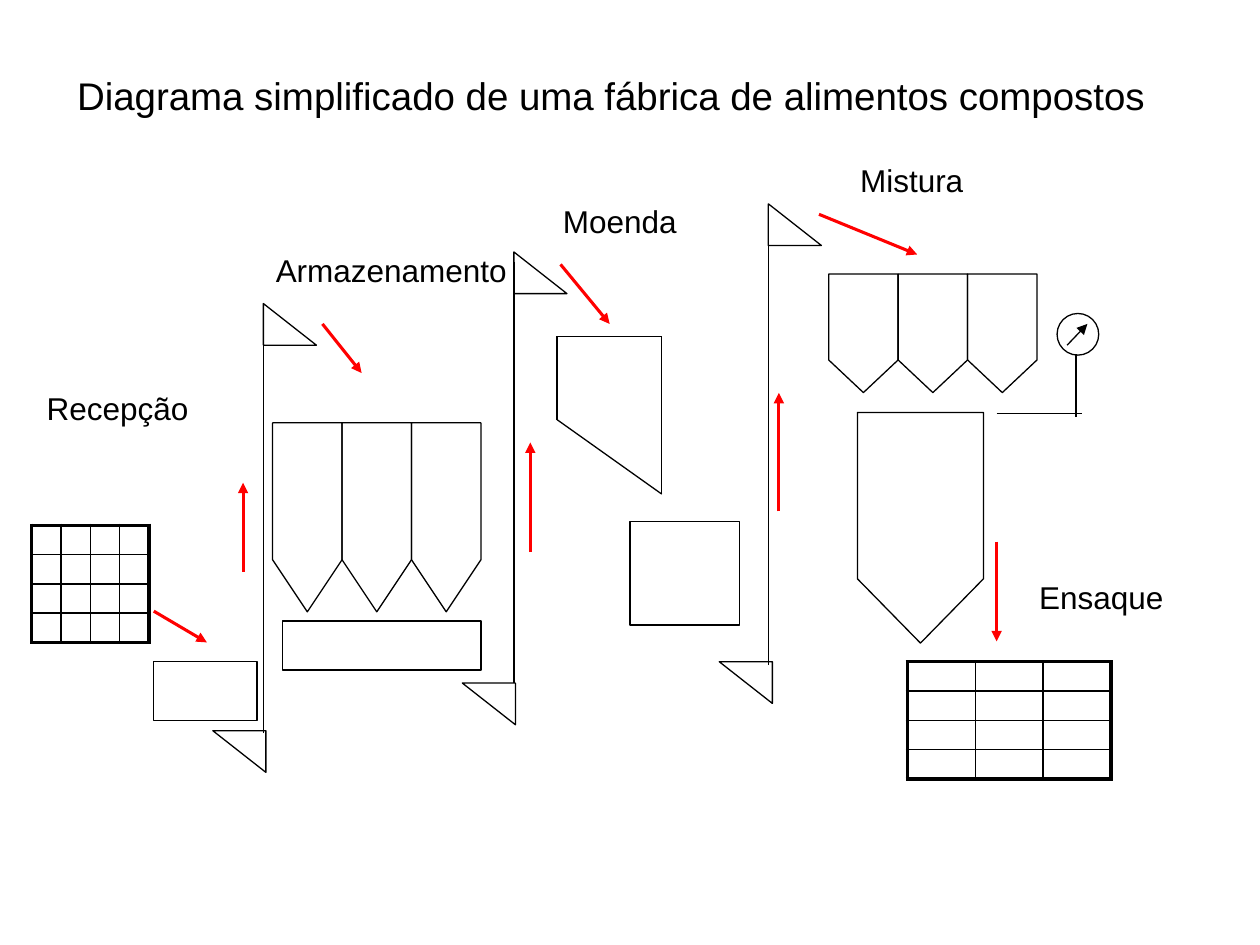
from lxml import etree
from pptx import Presentation
from pptx.dml.color import RGBColor as RGB
from pptx.enum.shapes import MSO_CONNECTOR as LINK, MSO_SHAPE as KIND
from pptx.enum.text import MSO_ANCHOR as ANCHOR, MSO_AUTO_SIZE as SIZE, PP_ALIGN as ALIGN
from pptx.oxml.ns import qn
from pptx.util import Cm, Pt

BLACK, RED = "000000", "FF0000"


def draw(kind, x, y, w, h, turn=0):
    shape = shapes.add_shape(kind, Cm(x), Cm(y), Cm(w), Cm(h))
    shape.rotation = turn
    shape.shadow.inherit = False
    shape.fill.background()
    shape.line.color.rgb = RGB.from_string(BLACK)
    shape.line.width = Pt(0.75)
    return shape


def link(start, end, color=BLACK, width=0.75, arrow=False):
    line = shapes.add_connector(LINK.STRAIGHT, *map(Cm, start + end))
    line.line.color.rgb = RGB.from_string(color)
    line.line.width = Pt(width)
    if arrow:
        etree.SubElement(line.line._get_or_add_ln(), qn("a:tailEnd"), type="triangle")
    etree.SubElement(line._element.spPr, qn("a:effectLst"))


prs = Presentation()
prs.slide_width, prs.slide_height = Cm(25.4), Cm(19.05)
slide = prs.slides.add_slide(prs.slide_layouts[5])
shapes = slide.shapes

# Title and stage labels
labels = [
    (shapes.title, "Diagrama simplificado de uma fábrica de alimentos compostos", 1.3, 1.32, 22.4, 1.19, 22),
    (None, "Recepção", 0.69, 7.72, 3.81, 1.02, 18),
    (None, "Armazenamento", 5.31, 4.93, 5.41, 1.02, 18),
    (None, "Moenda", 11.1, 3.94, 3.81, 1.02, 18),
    (None, "Mistura", 17.09, 3.12, 3.81, 1.02, 18),
    (None, "Ensaque", 20.7, 11.53, 3.81, 1.02, 18),
]
for box, text, x, y, w, h, size in labels:
    box = box or shapes.add_textbox(0, 0, 0, 0)
    box.left, box.top, box.width, box.height = Cm(x), Cm(y), Cm(w), Cm(h)
    frame = box.text_frame
    frame.word_wrap = True
    frame.auto_size = SIZE.NONE
    frame.vertical_anchor = ANCHOR.TOP
    frame.text = text
    para = frame.paragraphs[0]
    para.alignment = ALIGN.LEFT
    para.font.name, para.font.size = "Arial", Pt(size)
    para.font.color.rgb = RGB.from_string(BLACK)

# Intake grid and bag stack: thick frame, thin inner rules
for x, y, cols, wide in [(0.64, 10.59, 4, 0.59), (18.29, 13.34, 3, 1.37)]:
    rows, high = 4, 0.59
    frame = shapes.add_table(rows, cols, Cm(x), Cm(y), Cm(cols * wide), Cm(rows * high))
    grid = frame.table
    grid.first_row = grid.horz_banding = False
    for col in grid.columns:
        col.width = Cm(wide)
    for r, row in enumerate(grid.rows):
        row.height = Cm(high)
        for c, cell in enumerate(row.cells):
            cell.margin_left = cell.margin_right = cell.margin_top = cell.margin_bottom = 0
            etree.SubElement(cell.text_frame.paragraphs[0]._p, qn("a:endParaRPr"), sz="800")
            props = cell._tc.get_or_add_tcPr()
            edges = {"L": c == 0, "R": c == cols - 1, "T": r == 0, "B": r == rows - 1}
            for side, outer in edges.items():
                rule = etree.SubElement(props, qn("a:ln" + side), w=str(Pt(2.25 if outer else 1)))
                fill = etree.SubElement(rule, qn("a:solidFill"))
                etree.SubElement(fill, qn("a:srgbClr"), val=BLACK)
            cell.fill.background()

# Elevators: head, foot and belt
for x, head, foot, side, low, high in [
    (5.31, 6.12, 14.73, 4.29, 14.78, 6.32),
    (10.36, 5.08, 13.77, 9.32, 13.77, 5.28),
    (15.49, 4.11, 13.34, 14.5, 13.41, 4.72),
]:
    draw(KIND.RIGHT_TRIANGLE, x, head, 1.07, 0.84)
    draw(KIND.RIGHT_TRIANGLE, side, foot, 1.07, 0.84, 180)
    link((x, low), (x, high))

# Storage bins, dosing bins and mixer
for count, x, y, length, width, tip in [
    (3, 4.29, 9.73, 3.81, 1.4, 0.75),
    (3, 16.21, 6.02, 2.39, 1.4, 0.47),
    (1, 16.23, 9.37, 4.65, 2.54, 0.51),
]:
    for i in range(count):
        silo = draw(KIND.PENTAGON, x + i * width, y, length, width, 90)
        silo.adjustments[0] = tip

# Pit, bin conveyor and meal box
for x, y, w, h in [(3.1, 13.34, 2.08, 1.19), (5.69, 12.52, 4.01, 0.99), (12.7, 10.52, 2.21, 2.08)]:
    draw(KIND.RECTANGLE, x, y, w, h)

# Mill
mill = [(11.23, 6.78), (13.34, 6.78), (13.34, 9.96), (11.23, 8.46)]
for start, end in zip(mill, mill[1:] + mill[:1]):
    link(start, end)

# Scale with dial
draw(KIND.OVAL, 21.31, 6.32, 0.84, 0.84)
link((20.09, 8.33), (21.82, 8.33))
link((21.69, 8.41), (21.69, 7.14))
link((21.51, 6.96), (21.92, 6.53), arrow=True)

# Flow arrows
for start, end in [
    ((3.1, 12.32), (4.17, 12.95)),
    ((4.9, 11.53), (4.9, 9.73)),
    ((6.5, 6.53), (7.29, 7.52)),
    ((10.69, 11.13), (10.69, 8.92)),
    ((11.3, 5.33), (12.29, 6.53)),
    ((15.7, 10.31), (15.7, 7.92)),
    ((16.51, 4.32), (18.49, 5.13)),
    ((20.09, 10.92), (20.09, 12.93)),
]:
    link(start, end, RED, 1.75, True)

prs.save("out.pptx")
